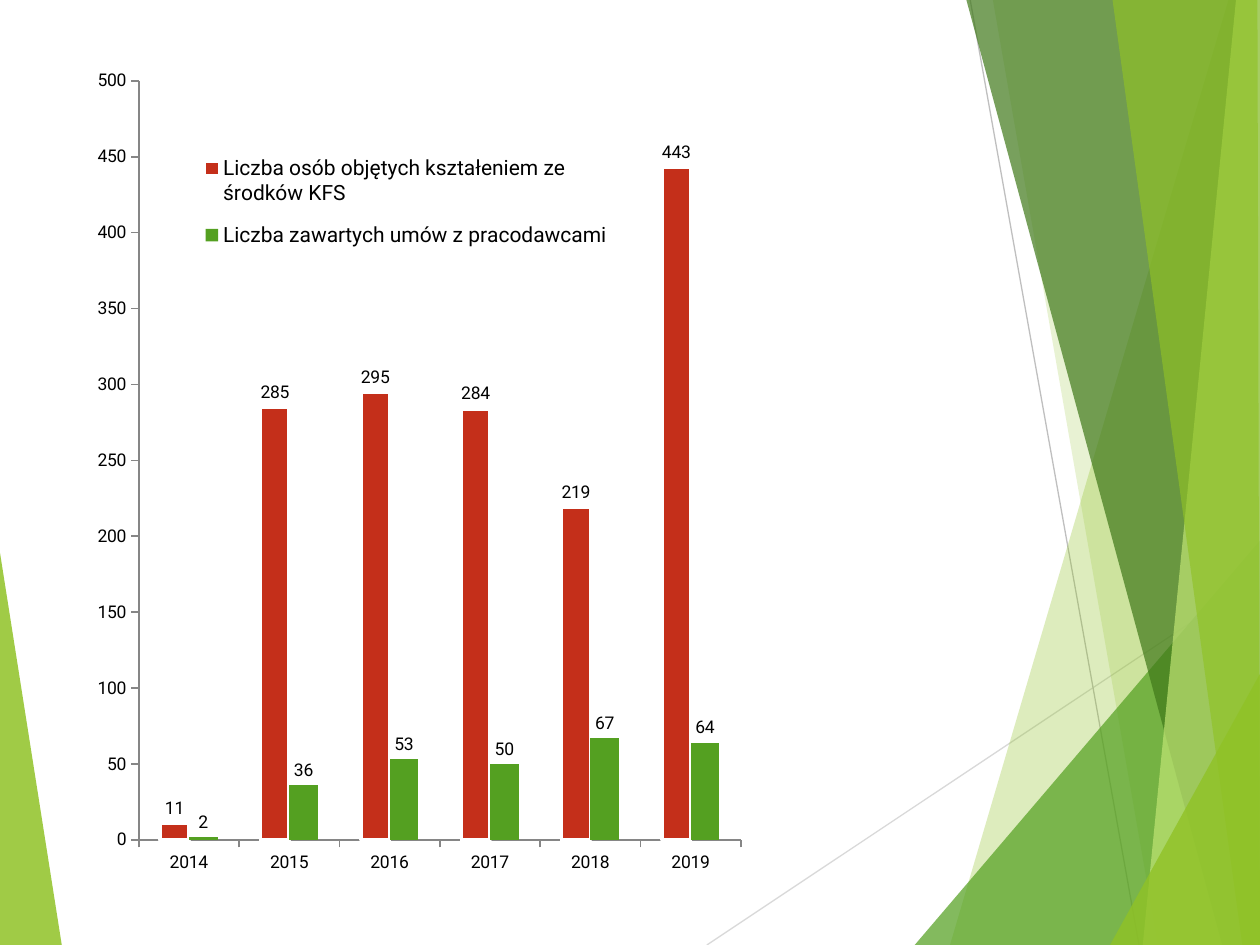
from dataclasses import dataclass

from lxml.etree import SubElement
from pptx import Presentation
from pptx.chart.data import CategoryChartData
from pptx.dml.color import RGBColor
from pptx.enum.chart import XL_CHART_TYPE as ChartType
from pptx.enum.chart import XL_LABEL_POSITION as LabelPosition
from pptx.enum.chart import XL_LEGEND_POSITION as LegendPosition
from pptx.enum.chart import XL_TICK_MARK as TickMark
from pptx.enum.shapes import MSO_CONNECTOR as Connector
from pptx.oxml import parse_xml
from pptx.oxml.ns import nsdecls, qn
from pptx.util import Inches, Pt

WIDTH, HEIGHT = Inches(10), Inches(7.5)


@dataclass(frozen=True)
class Theme:
    font: str = "Roboto"
    label_size: int = 10
    legend_size: int = 12
    text: str = "000000"
    axis: str = "868686"
    outline: str = "FFFFFF"
    people: str = "C42F1A"
    contracts: str = "54A021"
    lime: str = "90C226"
    green: str = "54A021"
    forest: str = "3F7819"
    pale: str = "C0E474"
    light_ray: str = "D9D9D9"
    dark_ray: str = "BFBFBF"


THEME = Theme()

# Points are percentages of the slide's width and height.
LEFT_LEAF = (THEME.lime, 85, [(0, 58.5), (4.9, 100), (0, 100)])
RAYS = [
    (THEME.light_ray, (56.1, 100), (100, 61)),
    (THEME.dark_ray, (77, 0), (90.4, 100)),
]
RIGHT_FACETS = [
    (THEME.lime, 30, [(97.5, 0), (75.4, 100), (100, 100), (100, 0)]),
    (THEME.lime, 20, [(78.8, 0), (91.9, 100), (100, 100), (100, 0)]),
    (THEME.green, 72, [(72.6, 100), (100, 57.2), (100, 100)]),
    (THEME.forest, 70, [(76.7, 0), (97, 100), (100, 100), (100, 0)]),
    (THEME.pale, 70, [(98.1, 0), (90.7, 100), (100, 100), (100, 0)]),
    (THEME.lime, 65, [(88.3, 0), (98.6, 100), (100, 100), (99.8, 0)]),
    (THEME.lime, 80, [(88.1, 100), (100, 71.3), (100, 100)]),
]

YEARS = ["2014", "2015", "2016", "2017", "2018", "2019"]
SERIES = [
    ("Liczba osób objętych kształeniem ze środków KFS",
     [11, 285, 295, 284, 219, 443], THEME.people),
    ("Liczba zawartych umów z pracodawcami",
     [2, 36, 53, 50, 67, 64], THEME.contracts),
]


def rgb(color):
    return RGBColor.from_string(color)


def place(point):
    """Turn percentages of the slide into EMU."""
    x, y = point
    return round(WIDTH * x / 100), round(HEIGHT * y / 100)


def add_facet(slide, color, opacity, corners):
    start, *others = map(place, corners)
    builder = slide.shapes.build_freeform(*start)
    builder.add_line_segments(others, close=True)
    facet = builder.convert_to_shape()
    facet.shadow.inherit = False
    facet.line.fill.background()
    facet.fill.solid()
    facet.fill.fore_color.rgb = rgb(color)
    tint = facet.fill._xPr.find(".//" + qn("a:srgbClr"))
    SubElement(tint, qn("a:alpha"), val=str(opacity * 1000))


def add_ray(slide, color, start, end):
    ray = slide.shapes.add_connector(Connector.STRAIGHT, *place(start), *place(end))
    ray.line.color.rgb = rgb(color)
    ray.line.width = Pt(0.75)
    SubElement(ray._element.spPr, qn("a:effectLst"))


def set_layout(part, index, x, y, w, h, inner=False):
    """Fix a chart part by shares of the chart's size."""
    for previous in part.findall(qn("c:layout")):
        part.remove(previous)
    target = '<c:layoutTarget val="inner"/>' if inner else ""
    sizes = "".join(f'<c:{key} val="{share}"/>'
                    for key, share in zip("xywh", (x, y, w, h)))
    part.insert(index, parse_xml(
        f'<c:layout {nsdecls("c")}><c:manualLayout>{target}'
        f'<c:xMode val="edge"/><c:yMode val="edge"/>{sizes}'
        '</c:manualLayout></c:layout>'))


def style_axis(axis):
    axis.has_major_gridlines = False
    axis.major_tick_mark = TickMark.OUTSIDE
    axis.minor_tick_mark = TickMark.NONE
    axis.format.line.color.rgb = rgb(THEME.axis)
    axis.format.line.width = Pt(1)


def style_series(series, color):
    series.invert_if_negative = False
    series.format.fill.solid()
    series.format.fill.fore_color.rgb = rgb(color)
    labels = series.data_labels
    labels.show_value = True
    labels.position = LabelPosition.OUTSIDE_END


def style_legend(chart):
    chart.has_legend = True
    legend = chart.legend
    legend.position = LegendPosition.RIGHT
    legend.include_in_layout = False
    legend.font.size = Pt(THEME.legend_size)
    legend.font.name = THEME.font
    legend.font.color.rgb = rgb(THEME.text)
    part = legend._element
    after_position = len(part.findall(qn("c:legendPos")))
    set_layout(part, after_position, 0.11, 0.1, 0.38, 0.15)


def add_training_chart(slide):
    data = CategoryChartData()
    data.categories = YEARS
    for name, values, _ in SERIES:
        data.add_series(name, values)
    chart = slide.shapes.add_chart(
        ChartType.COLUMN_CLUSTERED, *place((5.7, 5.9)), *place((88.5, 88.3)), data).chart
    chart.has_title = False
    chart.font.name = THEME.font
    chart.font.size = Pt(THEME.label_size)
    chart.font.color.rgb = rgb(THEME.text)

    for axis in (chart.category_axis, chart.value_axis):
        style_axis(axis)
    chart.value_axis.minimum_scale = 0
    chart.value_axis.maximum_scale = 500
    chart.value_axis.major_unit = 50

    plot = chart.plots[0]
    plot.vary_by_categories = False
    plot.gap_width = 150
    plot.overlap = 0
    for series, (_, _, color) in zip(plot.series, SERIES):
        style_series(series, color)
    people = plot.series[0]
    people.format.line.color.rgb = rgb(THEME.outline)
    people.format.line.width = Pt(2)

    style_legend(chart)
    plot_area = chart._chartSpace.find(".//" + qn("c:plotArea"))
    set_layout(plot_area, 0, 0.06, 0.03, 0.54, 0.91, inner=True)


def main():
    deck = Presentation()
    deck.slide_width, deck.slide_height = WIDTH, HEIGHT
    slide = deck.slides.add_slide(deck.slide_layouts[6])
    add_facet(slide, *LEFT_LEAF)
    for ray in RAYS:
        add_ray(slide, *ray)
    for facet in RIGHT_FACETS:
        add_facet(slide, *facet)
    add_training_chart(slide)
    deck.save("out.pptx")


if __name__ == "__main__":
    main()
